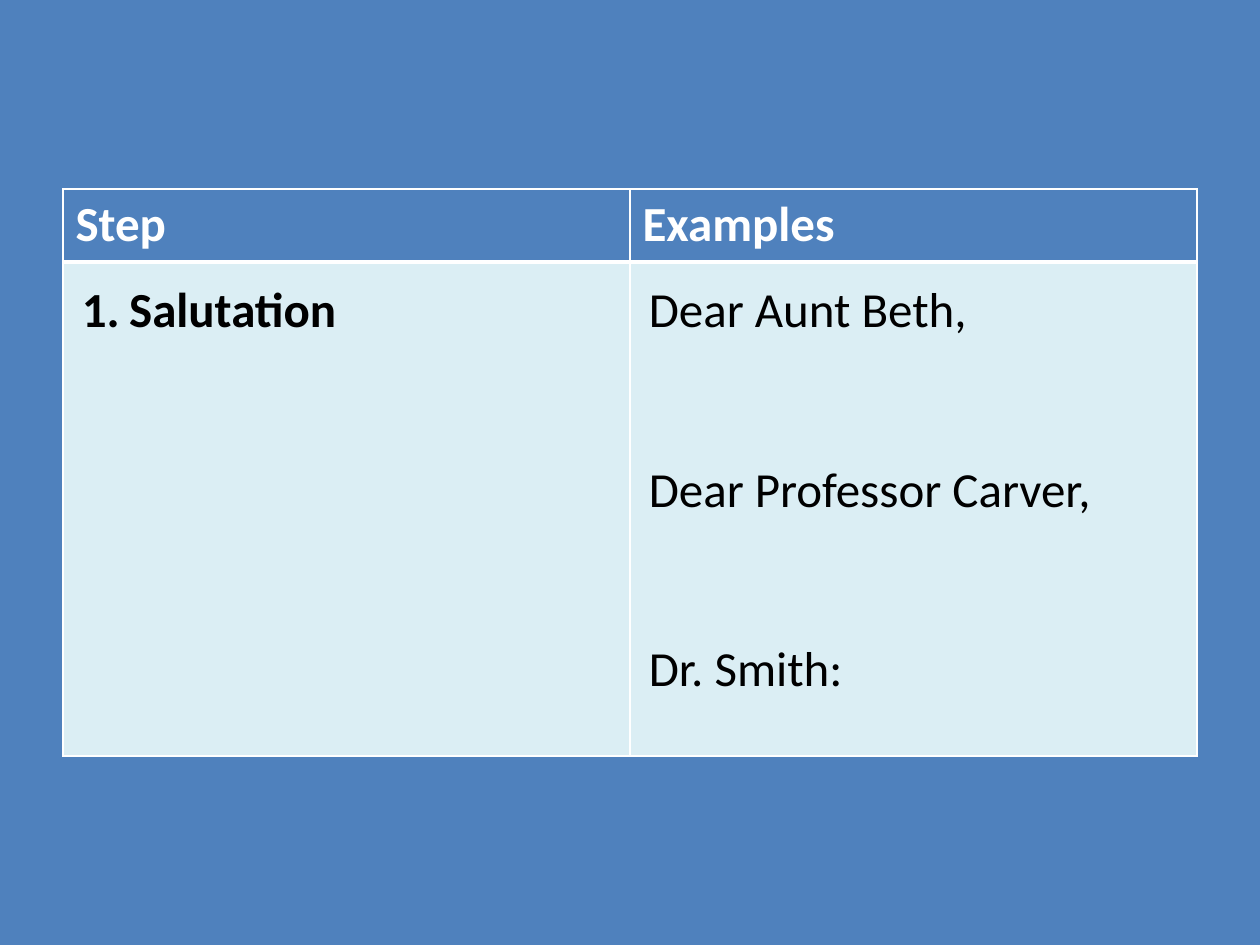
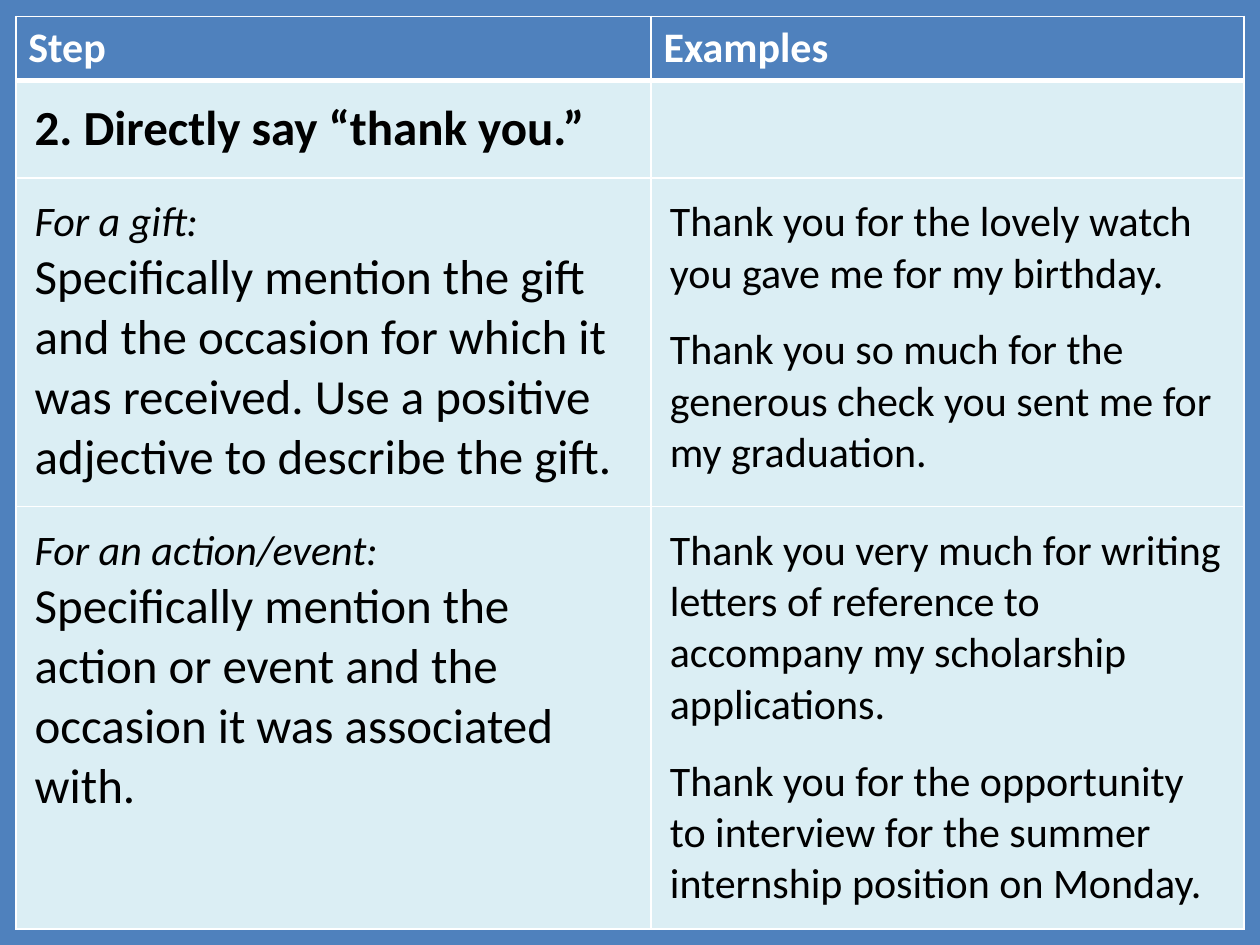
"""Two slides of tables on writing a thank-you note."""
from dataclasses import dataclass

from lxml.etree import SubElement
from pptx import Presentation
from pptx.dml.color import RGBColor as RGB
from pptx.oxml import parse_xml
from pptx.oxml.ns import nsdecls, qn
from pptx.util import Pt


@dataclass(frozen=True)
class Theme:
    """Colours, type sizes and measures in points shared by the slides."""
    blue: str = "4F81BD"
    pale: str = "DBEEF4"
    white: str = "FFFFFF"
    black: str = "000000"
    font: str = "Calibri"
    large: int = 28
    medium: int = 24
    inset: float = 10.8
    rule: int = 1
    header_rule: int = 3
    number_indent: int = 27


THEME = Theme()


def entry(text, **style):
    """Pair a paragraph's text with its format."""
    return text, style


def write(paragraph, text, size=THEME.large, color=THEME.black, bold=False,
          italic=False, before=0, numbered=False):
    """Put formatted text into a paragraph."""
    run = paragraph.add_run()
    run.text = text
    font = run.font
    font.name, font.size = THEME.font, Pt(size)
    font.bold, font.italic = bold, italic
    font.color.rgb = RGB.from_string(color)
    paragraph.space_before = Pt(before)
    if numbered:
        properties = paragraph._p.get_or_add_pPr()
        properties.set("marL", str(Pt(THEME.number_indent)))
        properties.set("indent", str(-Pt(THEME.number_indent)))
        SubElement(properties, qn("a:buFont"), typeface="+mj-lt")
        SubElement(properties, qn("a:buAutoNum"), type="arabicPeriod")


class Deck:
    """Holds the theme and the current slide."""

    def __init__(self, theme):
        """Start an empty presentation."""
        self.theme = theme
        self.presentation = Presentation()
        self.presentation.slide_width = Pt(720)
        self.presentation.slide_height = Pt(540)
        self.slide = None

    def add_slide(self):
        """Add a blank slide with the blue background."""
        self.slide = self.presentation.slides.add_slide(
            self.presentation.slide_layouts[6])
        background = self.slide.background.fill
        background.solid()
        background.fore_color.rgb = RGB.from_string(self.theme.blue)

    def borders(self, cell, top, bottom):
        """Draw white lines round a cell."""
        rule = self.theme.rule
        widths = {"lnL": rule, "lnR": rule, "lnT": top, "lnB": bottom}
        properties = cell._tc.get_or_add_tcPr()
        for position, (side, width) in enumerate(widths.items()):
            properties.insert(position, parse_xml(
                f'<a:{side} {nsdecls("a")} w="{Pt(width)}"><a:solidFill>'
                f'<a:srgbClr val="{self.theme.white}"/></a:solidFill></a:{side}>'))

    def cell(self, cell, entries, row):
        """Fill, outline and write one cell."""
        theme = self.theme
        cell.fill.solid()
        cell.fill.fore_color.rgb = RGB.from_string(theme.pale if row else theme.blue)
        self.borders(cell, theme.header_rule if row == 1 else theme.rule,
                     theme.header_rule if row == 0 else theme.rule)
        if row and entries:
            cell.margin_left = cell.margin_right = Pt(theme.inset)
            cell.margin_top = cell.margin_bottom = Pt(theme.inset)
        frame = cell.text_frame
        for index, (text, style) in enumerate(entries):
            paragraph = frame.add_paragraph() if index else frame.paragraphs[0]
            write(paragraph, text, **style)

    def steps_table(self, left, top, widths, heights, header_size, body):
        """Add a table of steps and their examples."""
        header = [[entry(title, size=header_size, color=self.theme.white, bold=True)]
                  for title in ("Step", "Examples")]
        table = self.slide.shapes.add_table(
            len(heights), len(widths), Pt(left), Pt(top),
            Pt(sum(widths)), Pt(sum(heights))).table
        table.horz_banding = False
        for column, width in zip(table.columns, widths):
            column.width = Pt(width)
        for row, height in zip(table.rows, heights):
            row.height = Pt(height)
        for row, cells in enumerate([header, *body]):
            for column, entries in enumerate(cells):
                self.cell(table.cell(row, column), entries, row)


def advice(occasion, instruction):
    """Give the step text for one occasion."""
    return [entry(occasion, size=THEME.medium, italic=True), entry(instruction)]


def examples(*sentences, size, gap):
    """Give example sentences set apart by a gap."""
    return [entry(sentence, size=size, before=gap if index else 0)
            for index, sentence in enumerate(sentences)]


def main():
    """Build and save the slides."""
    deck = Deck(THEME)

    deck.add_slide()
    salutations = examples("Dear Aunt Beth,", "Dear Professor Carver,", "Dr. Smith:",
                           size=THEME.large, gap=68.4)
    deck.steps_table(36, 108, [324, 324], [41.8, 282.2], THEME.large, [
        [[entry("Salutation", bold=True, numbered=True)], salutations]])

    deck.add_slide()
    gift_thanks = examples(
        "Thank you for the lovely watch you gave me for my birthday.",
        "Thank you so much for the generous check you sent me for my graduation.",
        size=THEME.medium, gap=14.6)
    event_thanks = examples(
        "Thank you very much for writing letters of reference to accompany my "
        "scholarship applications.",
        "Thank you for the opportunity to interview for the summer internship "
        "position on Monday.",
        size=THEME.medium, gap=14.6)
    deck.steps_table(9, 9.4, [363, 339], [36, 55.8, 187.8, 241], THEME.medium, [
        [[entry("2. Directly say “thank you.”", bold=True)], []],
        [advice("For a gift:",
                "Specifically mention the gift and the occasion for which it was "
                "received. Use a positive adjective to describe the gift."),
         gift_thanks],
        [advice("For an action/event:",
                "Specifically mention the action or event and the occasion it was "
                "associated with."),
         event_thanks]])

    deck.presentation.save("out.pptx")


if __name__ == "__main__":
    main()
